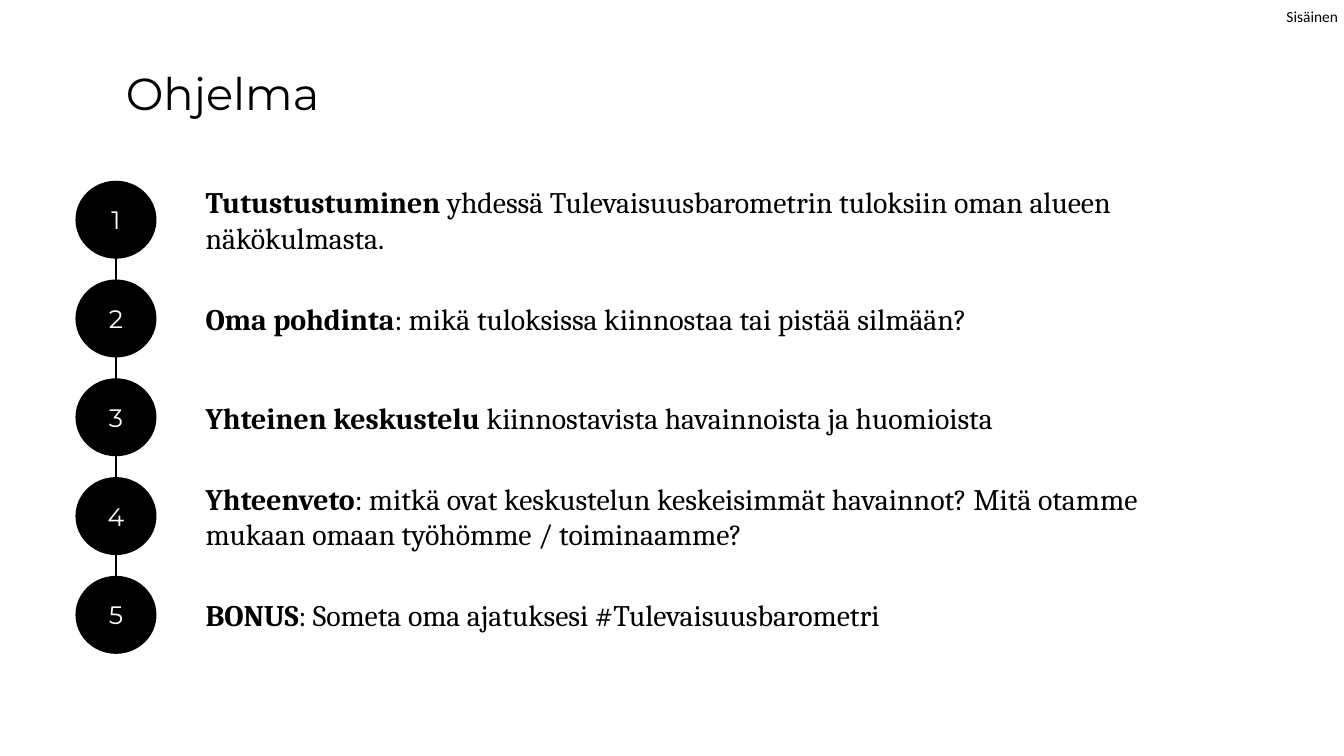
from lxml import etree
from pptx import Presentation
from pptx.dml.color import RGBColor
from pptx.enum.shapes import MSO_CONNECTOR, MSO_SHAPE
from pptx.enum.text import MSO_ANCHOR, PP_ALIGN
from pptx.oxml.ns import qn
from pptx.util import Inches, Pt

BLACK = RGBColor(0x00, 0x00, 0x00)
WHITE = RGBColor(0xFF, 0xFF, 0xFF)
STRAIGHT = MSO_CONNECTOR.STRAIGHT
OVAL = MSO_SHAPE.OVAL
TOP, MIDDLE = MSO_ANCHOR.TOP, MSO_ANCHOR.MIDDLE
CENTER = PP_ALIGN.CENTER

HEADING_FONT, BODY_FONT, LABEL_FONT = "Montserrat", "Cambria", "Calibri"
AXIS_X = 1.15
FIRST_Y, STEP = 2.18, 0.98
CIRCLE_W, CIRCLE_H = 0.79, 0.76
ITEM_H = 0.84

AGENDA = [
    ("Tutustustuminen ", "yhdessä Tulevaisuusbarometrin tuloksiin oman alueen näkökulmasta."),
    ("Oma pohdinta", ": mikä tuloksissa kiinnostaa tai pistää silmään?"),
    ("Yhteinen keskustelu ", "kiinnostavista havainnoista ja huomioista"),
    ("Yhteenveto", ": mitkä ovat keskustelun keskeisimmät havainnot? "
                   "Mitä otamme mukaan omaan työhömme / toiminaamme?"),
    ("BONUS", ": Someta oma ajatuksesi #Tulevaisuusbarometri"),
]


def add_run(p, text, font, size, color=BLACK, bold=False):
    r = p.add_run()
    r.text = text
    r.font.name = font
    r.font.size = Pt(size)
    r.font.bold = bold
    r.font.color.rgb = color


def add_text_box(s, left, top, width, height, anchor=TOP):
    tf = s.shapes.add_textbox(Inches(left), Inches(top), Inches(width), Inches(height)).text_frame
    tf.word_wrap = True
    tf.vertical_anchor = anchor
    return tf


def add_label(s, text):
    tf = add_text_box(s, 12.76, 0.07, 0.54, 0.18)
    tf.word_wrap = False
    tf.margin_left = tf.margin_right = tf.margin_top = tf.margin_bottom = 0
    add_run(tf.paragraphs[0], text, LABEL_FONT, 11)


def add_title(s, text):
    tf = add_text_box(s, AXIS_X, 0.6, 11.02, 1.18)
    add_run(tf.paragraphs[0], text, HEADING_FONT, 32)


def add_agenda_text(s, y, lead, rest):
    tf = add_text_box(s, 1.94, y - ITEM_H / 2, 10.24, ITEM_H, MIDDLE)
    p = tf.paragraphs[0]
    p.space_before = Pt(4.3)
    add_run(p, lead, BODY_FONT, 21.3, bold=True)
    add_run(p, rest, BODY_FONT, 21.3)


def add_axis(s, top, bottom):
    line = s.shapes.add_connector(
        STRAIGHT, Inches(AXIS_X), Inches(top), Inches(AXIS_X), Inches(bottom))
    line.line.color.rgb = BLACK
    line.line.width = Pt(1)
    etree.SubElement(line._element.spPr, qn("a:effectLst"))


def add_number(s, y, number):
    sp = s.shapes.add_shape(
        OVAL, Inches(AXIS_X - CIRCLE_W / 2), Inches(y - CIRCLE_H / 2),
        Inches(CIRCLE_W), Inches(CIRCLE_H))
    sp.shadow.inherit = False
    sp.fill.solid()
    sp.fill.fore_color.rgb = BLACK
    sp.line.color.rgb = BLACK
    sp.line.width = Pt(1)
    tf = sp.text_frame
    tf.vertical_anchor = MIDDLE
    p = tf.paragraphs[0]
    p.alignment = CENTER
    add_run(p, str(number), HEADING_FONT, 18, WHITE)


def main():
    prs = Presentation()
    prs.slide_width = Inches(13.33)
    prs.slide_height = Inches(7.5)
    s = prs.slides.add_slide(prs.slide_layouts[6])
    add_label(s, "Sisäinen")
    add_title(s, "Ohjelma")
    centers = [FIRST_Y + i * STEP for i in range(len(AGENDA))]
    for y, (lead, rest) in zip(centers, AGENDA):
        add_agenda_text(s, y, lead, rest)
    add_axis(s, centers[0], centers[-1])
    for number, y in enumerate(centers, start=1):
        add_number(s, y, number)
    prs.save("out.pptx")


if __name__ == "__main__":
    main()
